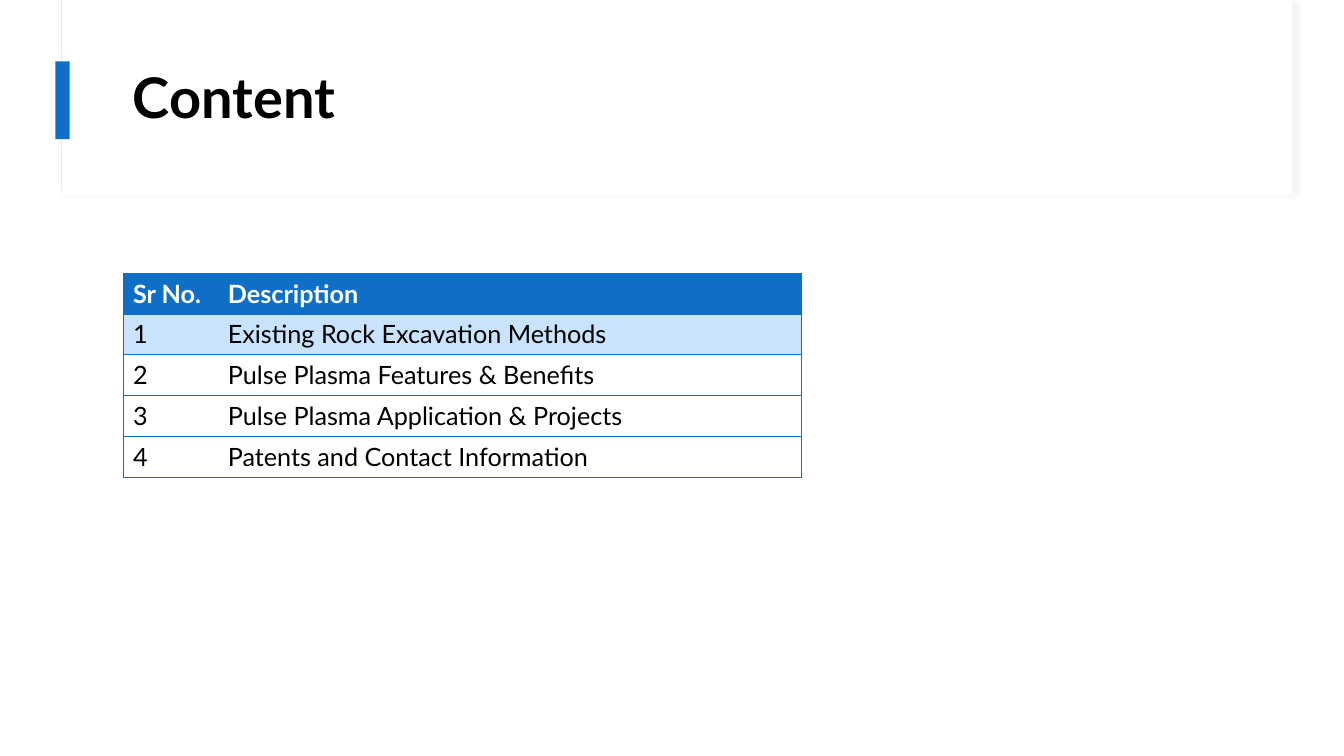
import pptx
import pptx.dml.color
import pptx.enum.shapes
import pptx.enum.text
import pptx.oxml
import pptx.oxml.ns
import pptx.util

Inches = pptx.util.Inches
Pt = pptx.util.Pt
FONT = "Lato"
BLUE, PALE_BLUE, WHITE, BLACK = "0F6FC6", "C8E3FB", "FFFFFF", "000000"
CONTENTS = [
    ("Sr No.", "Description"),
    ("1", "Existing Rock Excavation Methods"),
    ("2", "Pulse Plasma Features & Benefits"),
    ("3", "Pulse Plasma Application & Projects"),
    ("4", "Patents and Contact Information"),
]


def rgb(color):
    return pptx.dml.color.RGBColor.from_string(color)


def xml(text):
    """Parse an element whose tag has the a: prefix."""
    tag, rest = text[:text.index(" ")], text[text.index(" "):]
    return pptx.oxml.parse_xml(f"{tag} {pptx.oxml.ns.nsdecls('a')}{rest}")


def add_rect(s, x, y, w, h, fill, line=None):
    sp = s.shapes.add_shape(pptx.enum.shapes.MSO_SHAPE.RECTANGLE,
                            Inches(x), Inches(y), Inches(w), Inches(h))
    sp.shadow.inherit = False
    sp.fill.solid()
    sp.fill.fore_color.rgb = rgb(fill)
    if line:
        sp.line.color.rgb = rgb(line)
        sp.line.width = Pt(0.75)
    else:
        sp.line.fill.background()
    return sp


def add_run(p, text, size, color, bold):
    r = p.add_run()
    r.text = text
    r.font.name = FONT
    r.font.size = Pt(size)
    r.font.bold = bold
    r.font.color.rgb = rgb(color)


def add_soft_shadow(sp):
    effects = sp._element.spPr.find(pptx.oxml.ns.qn("a:effectLst"))
    effects.append(xml(
        f'<a:outerShdw blurRad="{Pt(4)}" dist="{Pt(3)}" dir="2700000" algn="tl" '
        'rotWithShape="0"><a:srgbClr val="D9D9D9"><a:alpha val="30000"/>'
        '</a:srgbClr></a:outerShdw>'))


def add_header(s, x, y, w, h, title):
    frame = add_rect(s, x, y, w, h, WHITE, "E0ECF8")
    add_soft_shadow(frame)
    add_rect(s, x + 0.01, y, w - 0.01, h + 0.05, WHITE)
    add_rect(s, x - 0.06, y + 0.61, 0.14, 0.77, BLUE)
    box = s.shapes.add_textbox(Inches(x + 0.61), Inches(y + 0.35),
                               Inches(11.12), Inches(1.29))
    tf = box.text_frame
    tf.word_wrap = True
    tf.vertical_anchor = pptx.enum.text.MSO_ANCHOR.MIDDLE
    p = tf.paragraphs[0]
    p.line_spacing = 0.9
    add_run(p, title, 40, BLACK, True)


def set_borders(cell, colors):
    """Set left, right, top and bottom borders; None means no line."""
    tc_pr = cell._tc.get_or_add_tcPr()
    for i, (side, color) in enumerate(zip("LRTB", colors)):
        fill = (f'<a:solidFill><a:srgbClr val="{color}"/></a:solidFill>'
                if color else "<a:noFill/>")
        tc_pr.insert(i, xml(f'<a:ln{side} w="{Pt(0.5)}">{fill}</a:ln{side}>'))


def add_contents_table(s, x, y, col_widths, row_height, rows):
    n_cols = len(col_widths)
    table = s.shapes.add_table(len(rows), n_cols, Inches(x), Inches(y),
                               Inches(sum(col_widths)),
                               Inches(row_height * len(rows))).table
    for col, width in zip(table.columns, col_widths):
        col.width = Inches(width)
    fills = {0: BLUE, 1: PALE_BLUE}
    for i, texts in enumerate(rows):
        table.rows[i].height = Inches(row_height)
        for j, text in enumerate(texts):
            cell = table.cell(i, j)
            cell.fill.solid()
            cell.fill.fore_color.rgb = rgb(fills.get(i, WHITE))
            set_borders(cell, (BLUE if j == 0 else None,
                               BLUE if j == n_cols - 1 else None, BLUE, BLUE))
            add_run(cell.text_frame.paragraphs[0], text, 18,
                    WHITE if i == 0 else BLACK, i == 0)


def main():
    prs = pptx.Presentation()
    prs.slide_width, prs.slide_height = Inches(13.33), Inches(7.5)
    s = prs.slides.add_slide(prs.slide_layouts[6])
    add_header(s, 0.61, 0, 12.21, 1.89, "Content")
    add_contents_table(s, 1.22, 2.71, (0.94, 5.79), 0.405, CONTENTS)
    prs.save("out.pptx")


if __name__ == "__main__":
    main()
